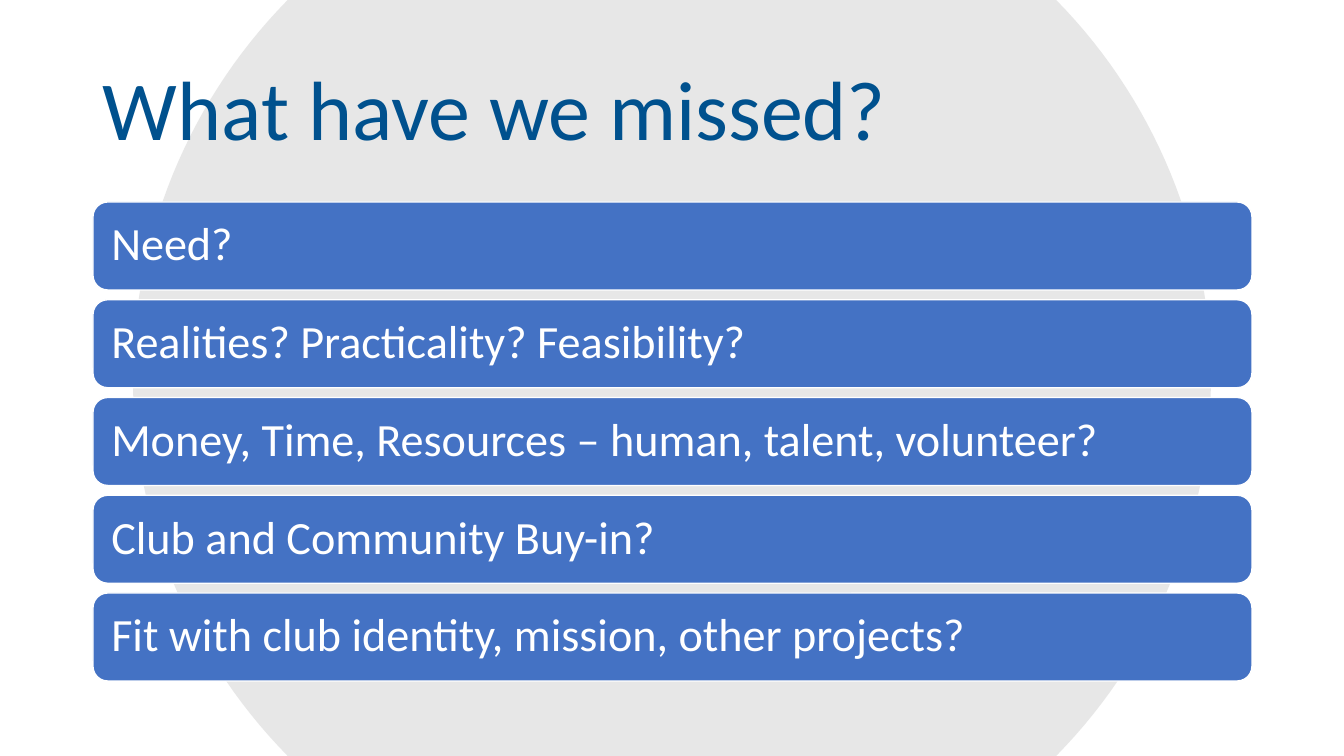
import math

from lxml import etree
from pptx import Presentation
from pptx import util as u
from pptx.dml.color import RGBColor
from pptx.enum import shapes, text
from pptx.oxml.ns import qn

TITLE = "What have we missed?"
QUESTIONS = [
    "Need?",
    "Realities? Practicality? Feasibility?",
    "Money, Time, Resources – human, talent, volunteer?",
    "Club and Community Buy-in?",
    "Fit with club identity, mission, other projects?",
]

NAVY = RGBColor(0x00, 0x51, 0x8E)
BLUE = RGBColor(0x44, 0x72, 0xC4)
GREY = RGBColor(0xD9, 0xD9, 0xD9)
WHITE = RGBColor(0xFF, 0xFF, 0xFF)

FONT = "Calibri"
PAGE_W, PAGE_H = 1344, 756
LEFT, WIDTH = 93, 1159
TITLE_TOP, TITLE_H = 40, 146
FIRST_TOP, LAST_TOP, BAR_H = 202, 593, 88
DISC_RADIUS, DISC_OPACITY, ARC_STEPS = 539, 62, 60


def px(length):
    return u.Emu(round(length * 914400 / 100.8))


def write(shape, words, size, color, inset_x, inset_y):
    frame = shape.text_frame
    frame.word_wrap = True
    frame.vertical_anchor = text.MSO_ANCHOR.MIDDLE
    frame.margin_left = frame.margin_right = px(inset_x)
    frame.margin_top = frame.margin_bottom = px(inset_y)
    para = frame.paragraphs[0]
    para.alignment = text.PP_ALIGN.LEFT
    para.line_spacing = 0.9
    span = para.add_run()
    span.text = words
    span.font.name = FONT
    span.font.size = u.Pt(size)
    span.font.color.rgb = color


def add_disc(page):
    limit = math.asin(PAGE_H / 2 / DISC_RADIUS)
    sweep = [limit * (2 * step / ARC_STEPS - 1) for step in range(ARC_STEPS + 1)]
    angles = sweep + [math.pi + angle for angle in sweep]
    points = [
        (px(PAGE_W / 2 + DISC_RADIUS * math.cos(angle)),
         px(PAGE_H / 2 + DISC_RADIUS * math.sin(angle)))
        for angle in angles
    ]
    builder = page.shapes.build_freeform(*points[0])
    builder.add_line_segments(points[1:], close=True)
    disc = builder.convert_to_shape()
    disc.shadow.inherit = False
    disc.line.fill.background()
    disc.fill.solid()
    disc.fill.fore_color.rgb = GREY
    tint = disc.fill._xPr.find(qn("a:solidFill"))[0]
    etree.SubElement(tint, qn("a:alpha"), val=str(DISC_OPACITY * 1000))


def add_bar(page, top, words):
    bar = page.shapes.add_shape(
        shapes.MSO_SHAPE.ROUNDED_RECTANGLE, px(LEFT), px(top), px(WIDTH), px(BAR_H))
    bar.shadow.inherit = False
    bar.fill.solid()
    bar.fill.fore_color.rgb = BLUE
    bar.line.color.rgb = WHITE
    bar.line.width = u.Pt(1)
    write(bar, words, size=33, color=WHITE, inset_x=14, inset_y=14)


def main():
    deck = Presentation()
    deck.slide_width, deck.slide_height = px(PAGE_W), px(PAGE_H)
    page = deck.slides.add_slide(deck.slide_layouts[6])

    add_disc(page)
    box = page.shapes.add_textbox(px(LEFT), px(TITLE_TOP), px(WIDTH), px(TITLE_H))
    write(box, TITLE, size=60, color=NAVY, inset_x=10, inset_y=5)

    pitch = (LAST_TOP - FIRST_TOP) / (len(QUESTIONS) - 1)
    for row, question in enumerate(QUESTIONS):
        add_bar(page, FIRST_TOP + row * pitch, question)

    deck.save("out.pptx")


if __name__ == "__main__":
    main()
